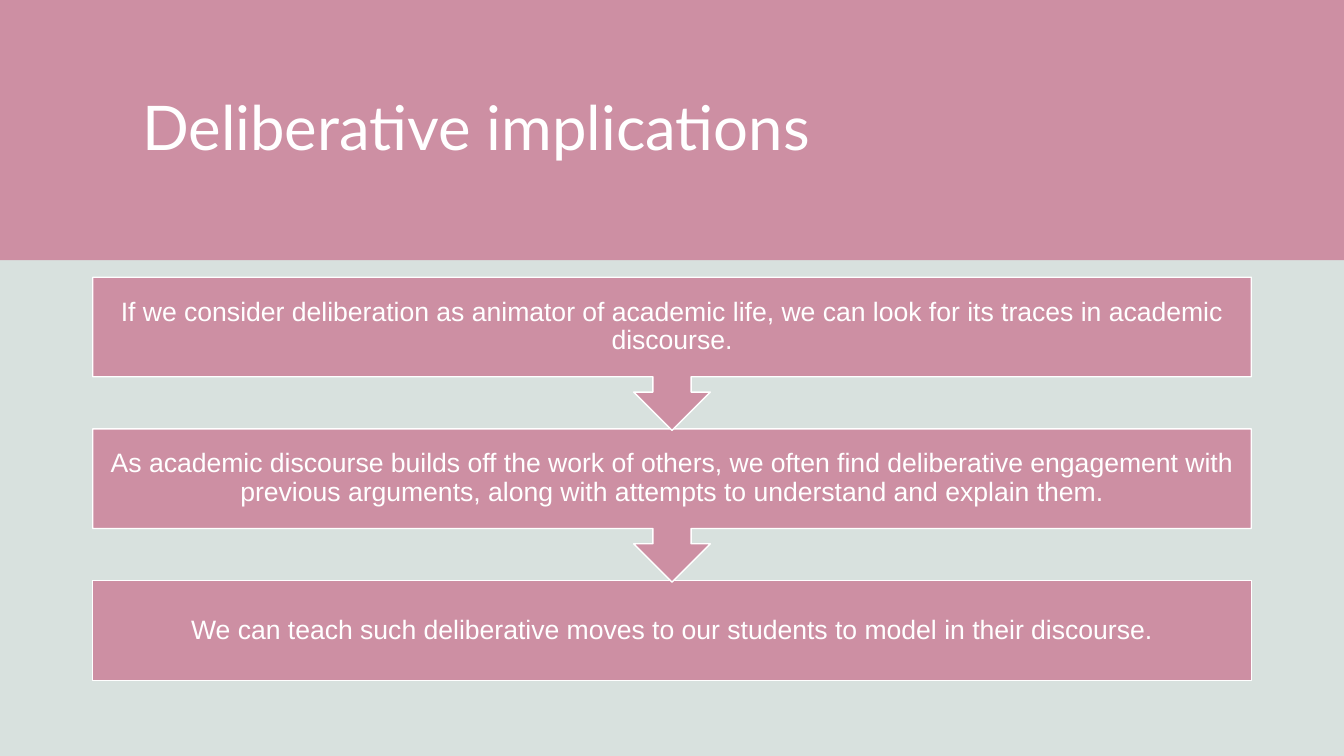
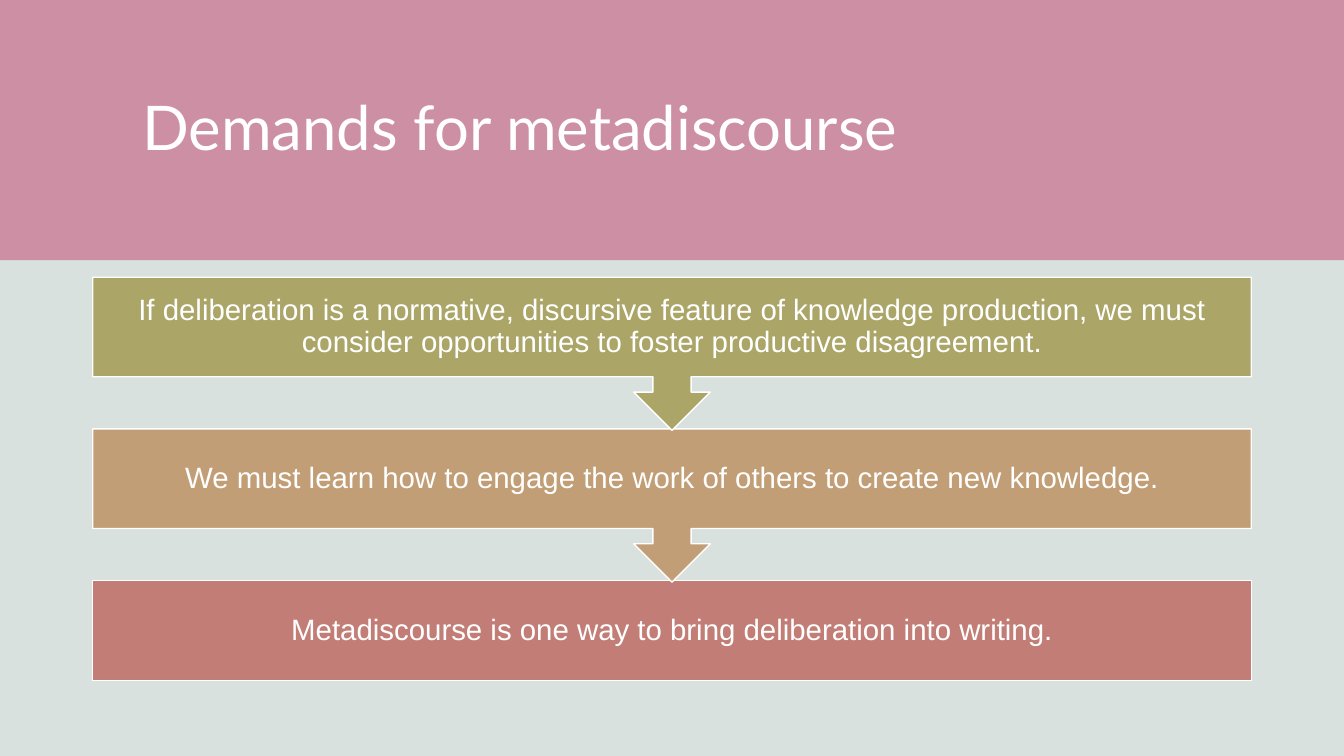
from pptx import Presentation
from pptx.dml.color import RGBColor
from pptx.enum.shapes import MSO_SHAPE
from pptx.enum.text import MSO_ANCHOR, PP_ALIGN
from pptx.util import Inches, Pt

RECT = MSO_SHAPE.RECTANGLE
CALLOUT = MSO_SHAPE.DOWN_ARROW_CALLOUT
MIDDLE = MSO_ANCHOR.MIDDLE
LEFT = PP_ALIGN.LEFT
CENTER = PP_ALIGN.CENTER

WIDE, HIGH = 13.33, 7.5
ROSE, OLIVE, TAN, RUST = "CD8FA3", "ABA668", "C29E76", "C27E76"
WHITE, MIST = "FFFFFF", "D8E1DE"

BAND = (0, 0, WIDE, 2.58)
TITLE = (1.31, 0.42, 10.94, 1.75)
SIDE, TOP, PITCH = 0.92, 2.75, 1.505
STEP = WIDE - 2 * SIDE
TALL, ARROW = 0.99, 1.52

SLIDES = [
    ("Deliberative implications", 19, 0.15, [
        (ROSE, "If we consider deliberation as animator of academic life, "
               "we can look for its traces in academic discourse."),
        (ROSE, "As academic discourse builds off the work of others, we often "
               "find deliberative engagement with previous arguments, along "
               "with attempts to understand and explain them."),
        (ROSE, "We can teach such deliberative moves to our students to "
               "model in their discourse."),
    ]),
    ("Demands for metadiscourse", 21, 0.16, [
        (OLIVE, "If deliberation is a normative, discursive feature of "
                "knowledge production, we must consider opportunities to "
                "foster productive disagreement."),
        (TAN, "We must learn how to engage the work of others to create "
              "new knowledge."),
        (RUST, "Metadiscourse is one way to bring deliberation into writing."),
    ]),
]


def color(text):
    return RGBColor.from_string(text)


def apply(item, values):
    for name, value in values.items():
        setattr(item, name, value)


def paint(fill, tone):
    fill.solid()
    fill.fore_color.rgb = color(tone)


def place(shape, box):
    names = ("left", "top", "width", "height")
    apply(shape, dict(zip(names, map(Inches, box))))


def write(shape, text, face, size, align, pad):
    frame = shape.text_frame
    frame.text = text
    sides = ("left", "top", "right", "bottom")
    apply(frame, {f"margin_{side}": Inches(pad) for side in sides})
    apply(frame, {"word_wrap": True, "vertical_anchor": MIDDLE})
    line = frame.paragraphs[0]
    apply(line, {"alignment": align, "line_spacing": 0.9})
    apply(line.font, {"name": face, "size": Pt(size)})
    line.font.color.rgb = color(WHITE)


def block(slide, kind, box, tone):
    shape = slide.shapes.add_shape(kind, *map(Inches, box))
    shape.shadow.inherit = False
    paint(shape.fill, tone)
    shape.line.fill.background()
    return shape


def header(slide, text):
    band = block(slide, RECT, BAND, ROSE)
    title = slide.shapes.title
    title._element.addprevious(band._element)
    place(title, TITLE)
    write(title, text, "Lato", 44, LEFT, 0.1)


def flow(slide, steps, size, pad):
    last = len(steps) - 1
    for row in range(last, -1, -1):
        tone, text = steps[row]
        kind, tall = (RECT, TALL) if row == last else (CALLOUT, ARROW)
        box = (SIDE, TOP + row * PITCH, STEP, tall)
        shape = block(slide, kind, box, tone)
        paint(shape.line.fill, WHITE)
        shape.line.width = Pt(1)
        write(shape, text, "Arial", size, CENTER, pad)


def main():
    deck = Presentation()
    apply(deck, {"slide_width": Inches(WIDE), "slide_height": Inches(HIGH)})
    paint(deck.slide_master.background.fill, MIST)
    layout = deck.slide_layouts.get_by_name("Title Only")
    for title, size, pad, steps in SLIDES:
        slide = deck.slides.add_slide(layout)
        header(slide, title)
        flow(slide, steps, size, pad)
    deck.save("out.pptx")


if __name__ == "__main__":
    main()
